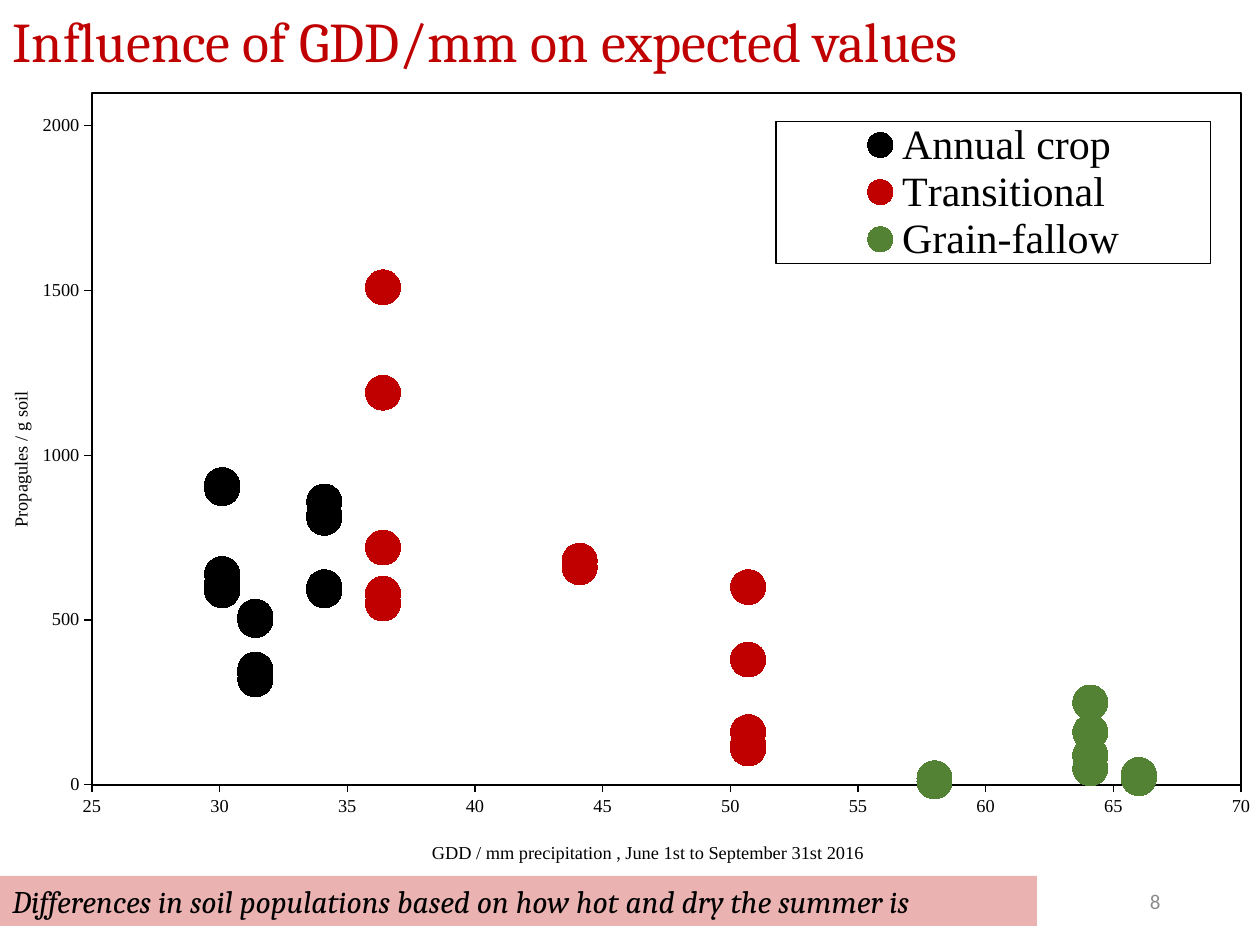
from dataclasses import dataclass
from itertools import cycle

from lxml import etree
from pptx import Presentation
from pptx.chart.data import XyChartData
from pptx.dml.color import RGBColor
from pptx.enum.chart import (XL_AXIS_CROSSES, XL_CHART_TYPE, XL_LEGEND_POSITION,
                             XL_MARKER_STYLE, XL_TICK_MARK)
from pptx.enum.shapes import MSO_SHAPE
from pptx.enum.text import MSO_ANCHOR, PP_ALIGN
from pptx.oxml import parse_xml
from pptx.oxml.ns import nsdecls, qn
from pptx.util import Emu, Pt

SCATTER = XL_CHART_TYPE.XY_SCATTER
CIRCLE = XL_MARKER_STYLE.CIRCLE
TICK_OUTSIDE, TICK_NONE = XL_TICK_MARK.OUTSIDE, XL_TICK_MARK.NONE
EMU_PER_PX = 914400 / 126
BLACK, RED, GREEN, GRAY = "000000", "C00000", "548235", "8C8C8C"
HEADING_FONT, CHART_FONT = "Cambria", "Times New Roman"


@dataclass
class CropSystem:
    """One series; sites are the GDD/mm values that its counts cycle through."""
    name: str
    color: str
    sites: tuple
    counts: tuple  # None marks a missing sample


@dataclass
class AxisStyle:
    title: str
    minimum: int
    maximum: int
    step: int
    title_place: tuple


CROP_SYSTEMS = (
    CropSystem("Annual crop", BLACK, (34.1, 31.4, 30.1),
               (860, 320, 590, 820, 340, 610, 590, 510, 910,
                600, 500, 900, 810, 350, 640)),
    CropSystem("Transitional", RED, (36.4, 44.1, 50.7),
               (720, 660, 160, 580, 660, 120, 1510, 680, 600,
                1190, 680, 380, 550, 660, 110)),
    CropSystem("Grain-fallow", GREEN, (64.1, 66, 58),
               (250, 30, 20, 250, 30, 20, 50, 20, None,
                90, 20, 10, 160, 30, 10)),
)
GDD_AXIS = AxisStyle("GDD / mm precipitation , June 1st to September 31st 2016",
                     25, 70, 5, (0.34, 0.97))
SOIL_AXIS = AxisStyle("Propagules / g soil", 0, 2100, 500, (0.005, 0.4))


def px(length: int) -> Emu:
    return Emu(round(length * EMU_PER_PX))


def box(left: int, top: int, width: int, height: int) -> tuple:
    return px(left), px(top), px(width), px(height)


def rgb(color: str) -> RGBColor:
    return RGBColor.from_string(color)


def style_font(font, name: str, size: float, color: str, italic: bool = False) -> None:
    font.name, font.size, font.bold, font.italic = name, Pt(size), False, italic
    font.color.rgb = rgb(color)


def place(element, left: float, top: float, width=None, height=None) -> None:
    """Give a chart part a manual layout, in fractions of the chart."""
    for old in element.findall(qn("c:layout")):
        element.remove(old)
    layout = parse_xml(f"<c:layout {nsdecls('c')}><c:manualLayout/></c:layout>")
    manual = layout[0]
    settings = {"xMode": "edge", "yMode": "edge", "x": left, "y": top}
    if width is not None:
        settings |= {"w": width, "h": height}
    if element.tag == qn("c:plotArea"):
        settings = {"layoutTarget": "inner"} | settings
    for tag, value in settings.items():
        etree.SubElement(manual, qn(f"c:{tag}")).set("val", str(value))
    has_leader = len(element) and element[0].tag in (qn("c:tx"), qn("c:legendPos"))
    element.insert(1 if has_leader else 0, layout)


def black_border():
    return parse_xml(
        f"<c:spPr {nsdecls('c', 'a')}><a:noFill/><a:ln w='9525'><a:solidFill>"
        f"<a:srgbClr val='{BLACK}'/></a:solidFill></a:ln></c:spPr>")


def style_axis(axis, style: AxisStyle) -> None:
    axis.minimum_scale, axis.maximum_scale = style.minimum, style.maximum
    axis.major_unit = style.step
    axis.has_major_gridlines = False
    axis.major_tick_mark, axis.minor_tick_mark = TICK_OUTSIDE, TICK_NONE
    axis.crosses = XL_AXIS_CROSSES.MINIMUM
    axis.format.line.color.rgb = rgb(BLACK)
    axis.format.line.width = Pt(0.75)
    style_font(axis.tick_labels.font, CHART_FONT, 10.5, BLACK)
    paragraph = axis.axis_title.text_frame.paragraphs[0]
    paragraph.text = style.title
    style_font(paragraph.font, CHART_FONT, 10.5, BLACK)
    place(axis.axis_title._element, *style.title_place)


def add_soil_chart(slide) -> None:
    data = XyChartData()
    for system in CROP_SYSTEMS:
        series = data.add_series(system.name)
        for site, count in zip(cycle(system.sites), system.counts):
            if count is not None:
                series.add_data_point(site, count)
    chart = slide.shapes.add_chart(SCATTER, *box(0, 74, 1260, 795), data).chart
    chart.has_title = False
    style_font(chart.font, CHART_FONT, 10.5, BLACK)
    plot = chart.plots[0]
    plot.vary_by_categories = False
    for series, system in zip(plot.series, CROP_SYSTEMS):
        series.smooth = False
        series.format.line.fill.background()
        marker = series.marker
        marker.style, marker.size = CIRCLE, 20
        marker.format.fill.solid()
        marker.format.fill.fore_color.rgb = rgb(system.color)
        marker.format.line.color.rgb = rgb(system.color)
    style_axis(chart.category_axis, GDD_AXIS)
    style_axis(chart.value_axis, SOIL_AXIS)

    plot_area = chart._chartSpace.chart.plotArea
    place(plot_area, 0.073, 0.024, 0.912, 0.878)
    plot_area.append(black_border())

    chart.has_legend = True
    legend = chart.legend
    legend.position = XL_LEGEND_POSITION.RIGHT
    legend.include_in_layout = False
    style_font(legend.font, CHART_FONT, 24, BLACK)
    place(legend._element, 0.616, 0.06, 0.345, 0.18)
    legend._element.find(qn("c:txPr")).addprevious(black_border())


def add_title(slide) -> None:
    title = slide.shapes.title
    title.left, title.top, title.width, title.height = box(0, 0, 1260, 81)
    frame = title.text_frame
    frame.text = "Influence of GDD/mm on expected values"
    frame.vertical_anchor = MSO_ANCHOR.MIDDLE
    paragraph = frame.paragraphs[0]
    paragraph.alignment = PP_ALIGN.LEFT
    style_font(paragraph.font, HEADING_FONT, 32, RED)


def add_takeaway(slide) -> None:
    banner = slide.shapes.add_shape(MSO_SHAPE.RECTANGLE, *box(0, 876, 1037, 50))
    banner.shadow.inherit = False
    banner.line.fill.background()
    banner.fill.solid()
    banner.fill.fore_color.rgb = rgb(RED)
    color = banner._element.spPr.find(f".//{qn('a:srgbClr')}")
    etree.SubElement(color, qn("a:alpha")).set("val", "30000")
    frame = banner.text_frame
    frame.text = "Differences in soil populations based on how hot and dry the summer is"
    frame.word_wrap = True
    paragraph = frame.paragraphs[0]
    paragraph.alignment = PP_ALIGN.LEFT
    style_font(paragraph.font, HEADING_FONT, 18, BLACK, italic=True)


def add_slide_number(slide) -> None:
    frame = slide.shapes.add_textbox(*box(890, 876, 283, 50)).text_frame
    frame.word_wrap = True
    frame.vertical_anchor = MSO_ANCHOR.MIDDLE
    paragraph = frame.paragraphs[0]
    paragraph.alignment = PP_ALIGN.RIGHT
    run = paragraph.add_run()
    run.text = "8"
    style_font(run.font, "Calibri", 12, GRAY)


def main() -> None:
    presentation = Presentation()
    presentation.slide_width, presentation.slide_height = px(1260), px(945)
    slide = presentation.slides.add_slide(presentation.slide_layouts[5])
    add_slide_number(slide)
    add_title(slide)
    add_soil_chart(slide)
    add_takeaway(slide)
    presentation.save("out.pptx")


if __name__ == "__main__":
    main()
